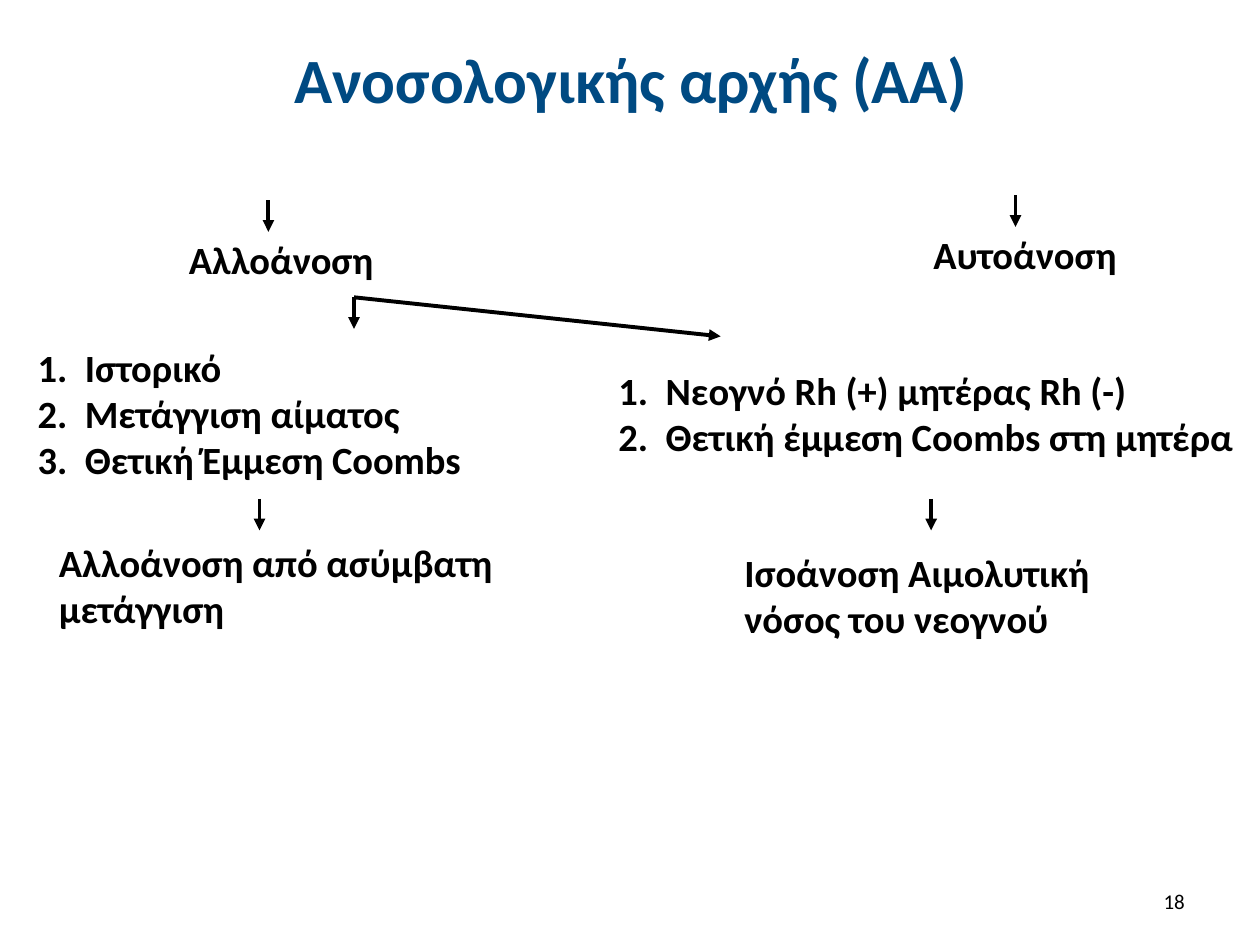
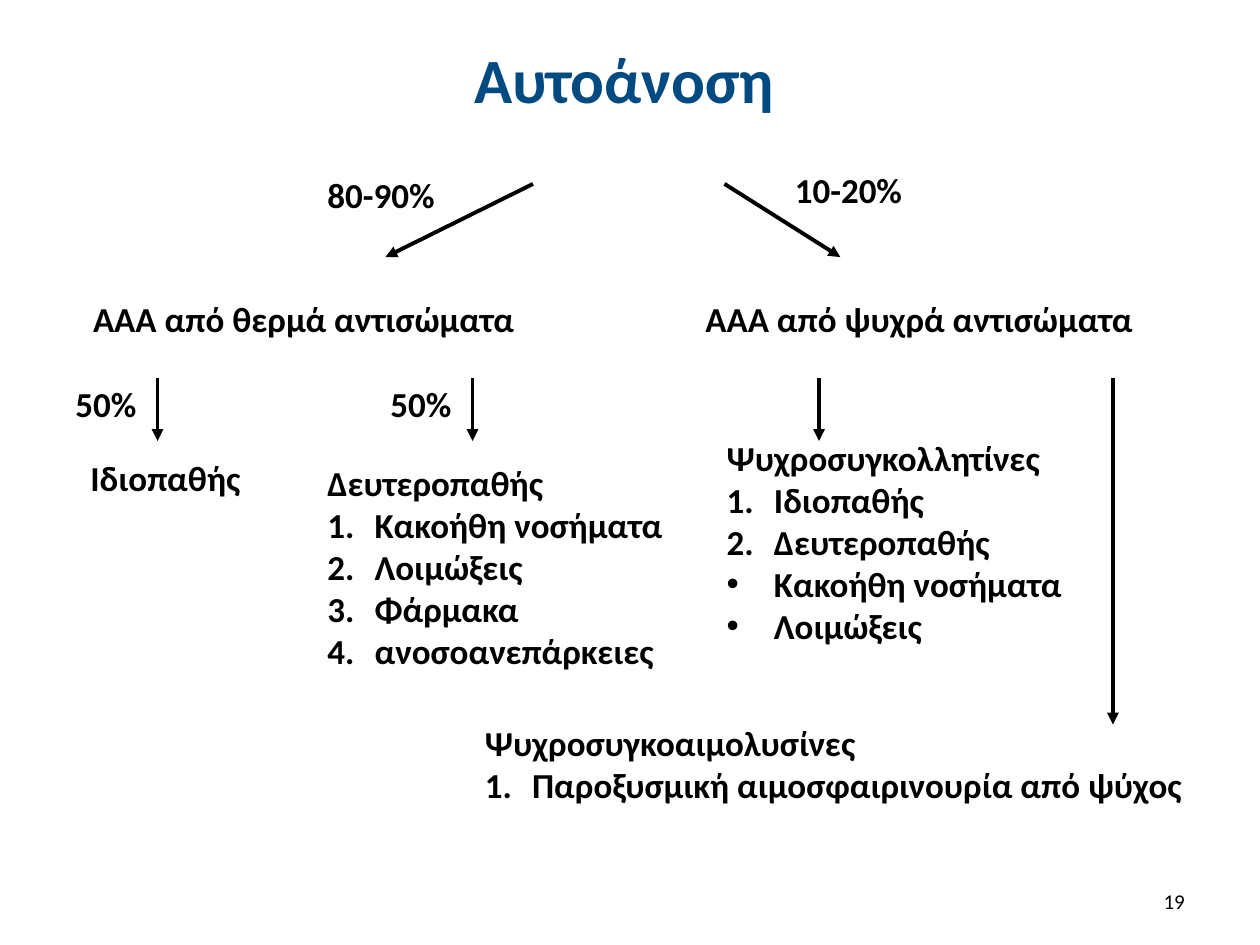
from dataclasses import dataclass

from lxml import etree
from pptx import Presentation
from pptx.dml.color import RGBColor
from pptx.enum import shapes, text
from pptx.oxml import ns
from pptx.util import Pt


@dataclass(frozen=True)
class Theme:
    font: str = "Calibri"
    ink: RGBColor = RGBColor(0x00, 0x00, 0x00)
    heading: RGBColor = RGBColor(0x00, 0x4A, 0x82)
    paper: RGBColor = RGBColor(0xFF, 0xFF, 0xFF)
    title_size: int = 36
    overview_size: int = 22
    detail_size: int = 20
    number_size: int = 12
    arrow_width: float = 2.25
    list_indent: int = 27
    title_box: tuple = (36.7, 9, 648, 71.3)
    number_box: tuple = (516.2, 500.4, 160.8, 28.8)


def numbered(*items):
    return [("number", item) for item in items]


def bulleted(*items):
    return [("bullet", item) for item in items]


def plain(*items):
    return [(None, item) for item in items]


class Deck:
    def __init__(self, theme):
        self.theme = theme
        self.presentation = Presentation()
        self.presentation.slide_width = Pt(720)
        self.presentation.slide_height = Pt(540)
        self.slide = None

    def start_slide(self, title, number):
        theme = self.theme
        layout = self.presentation.slide_layouts.get_by_name("Title Only")
        self.slide = self.presentation.slides.add_slide(layout)
        background = self.slide.background.fill
        background.solid()
        background.fore_color.rgb = theme.paper

        heading = self.slide.shapes.title
        heading.left, heading.top, heading.width, heading.height = map(Pt, theme.title_box)
        heading.text_frame.text = title
        heading.text_frame.vertical_anchor = text.MSO_ANCHOR.MIDDLE
        self.format(heading.text_frame.paragraphs[0], theme.title_size,
                    theme.heading, align=text.PP_ALIGN.CENTER)
        self.label(theme.number_box, plain(str(number)), theme.number_size,
                   bold=False, align=text.PP_ALIGN.RIGHT, wrap=True)

    def format(self, paragraph, size, color, bold=True, align=text.PP_ALIGN.LEFT):
        paragraph.alignment = align
        font = paragraph.font
        font.name, font.size, font.bold = self.theme.font, Pt(size), bold
        font.color.rgb = color

    def mark(self, paragraph, marker):
        """Give a paragraph a hanging number or bullet."""
        properties = paragraph._p.get_or_add_pPr()
        indent = Pt(self.theme.list_indent)
        properties.set("marL", str(indent))
        properties.set("indent", str(-indent))
        # Bullet elements come before the default run properties.
        if marker == "number":
            elements = [("a:buFont", "typeface", "+mj-lt"),
                        ("a:buAutoNum", "type", "arabicPeriod")]
        else:
            elements = [("a:buFont", "typeface", "Arial"), ("a:buChar", "char", "•")]
        for position, (tag, attribute, value) in enumerate(elements):
            element = etree.Element(ns.qn(tag))
            element.set(attribute, value)
            properties.insert(position, element)

    def label(self, box, lines, size, bold=True, align=text.PP_ALIGN.LEFT, wrap=False):
        frame = self.slide.shapes.add_textbox(*map(Pt, box)).text_frame
        frame.word_wrap = wrap
        frame.margin_right = 0
        frame.vertical_anchor = text.MSO_ANCHOR.MIDDLE
        for index, (marker, wording) in enumerate(lines):
            paragraph = frame.add_paragraph() if index else frame.paragraphs[0]
            paragraph.text = wording
            self.format(paragraph, size, self.theme.ink, bold, align)
            if marker:
                self.mark(paragraph, marker)

    def arrow(self, start, end):
        arrow = self.slide.shapes.add_connector(
            shapes.MSO_CONNECTOR.STRAIGHT, *map(Pt, (*start, *end)))
        arrow.line.color.rgb = self.theme.ink
        arrow.line.width = Pt(self.theme.arrow_width)
        head = etree.SubElement(arrow.line._get_or_add_ln(), ns.qn("a:tailEnd"))
        head.set("type", "triangle")
        etree.SubElement(arrow._element.spPr, ns.qn("a:effectLst"))


def add_immune_origin(deck):
    deck.start_slide("Ανοσολογικής αρχής (ΑΑ)", 18)
    size = deck.theme.overview_size
    deck.label((14.4, 195.8, 260, 80.6),
               numbered("Ιστορικό", "Μετάγγιση αίματος", "Θετική Έμμεση Coombs"), size)
    deck.label((346.3, 195.8, 366, 80.6),
               numbered("Νεογνό Rh (+) μητέρας Rh (-)",
                        "Θετική έμμεση Coombs στη μητέρα"), size)
    deck.label((100.8, 133.2, 116, 29.5), plain("Αλλοάνοση"), size)
    deck.label((526.3, 130.3, 116, 29.5), plain("Αυτοάνοση"), size)
    deck.label((26.6, 310.3, 262, 48.2),
               plain("Αλλοάνοση από ασύμβατη", "μετάγγιση"), size)
    deck.label((418.3, 310.3, 242.6, 59.8),
               plain("Ισοάνοση Αιμολυτική", "νόσος του νεογνού"), size)

    drop = 18
    for x, y in ((153.4, 114.5), (580.3, 111.6), (202.3, 169.9),
                 (148.3, 285.1), (532.1, 285.1)):
        deck.arrow((x, y), (x, y + drop))
    deck.arrow((202.3, 169.9), (411.8, 192.2))


def add_autoimmunity(deck):
    deck.start_slide("Αυτοάνοση ", 19)
    size = deck.theme.detail_size
    for box, wording in (
        ((180, 96.5, 76, 29.5), "80-90%"),
        ((447.1, 93.6, 76, 29.5), "10-20%"),
        ((46.1, 162, 260, 40.3), "ΑΑΑ από θερμά αντισώματα"),
        ((396, 162, 260, 40.3), "ΑΑΑ από ψυχρά αντισώματα"),
        ((36, 216, 46, 29.5), "50%"),
        ((216, 216, 46, 29.5), "50%"),
        ((44.6, 257.8, 102.2, 29.5), "Ιδιοπαθής"),
    ):
        deck.label(box, plain(wording), size)

    causes = ("Κακοήθη νοσήματα", "Λοιμώξεις")
    deck.label((180, 263.5, 220.3, 120.2),
               plain("Δευτεροπαθής")
               + numbered(*causes, "Φάρμακα", "ανοσοανεπάρκειες"), size)
    deck.label((408.2, 257.4, 216, 103.8),
               plain("Ψυχροσυγκολλητίνες")
               + numbered("Ιδιοπαθής", "Δευτεροπαθής") + bulleted(*causes), size)
    deck.label((270, 416.6, 426.2, 39),
               plain("Ψυχροσυγκοαιμολυσίνες")
               + numbered("Παροξυσμική αιμοσφαιρινουρία από ψύχος"), size)

    deck.arrow((304.6, 105.1), (220.3, 146.9))
    deck.arrow((414, 105.1), (480.2, 146.9))
    for x, bottom in ((90, 252), (270, 252), (468, 252), (636, 414)):
        deck.arrow((x, 216), (x, bottom))


def main():
    deck = Deck(Theme())
    add_immune_origin(deck)
    add_autoimmunity(deck)
    deck.presentation.save("out.pptx")


if __name__ == "__main__":
    main()
